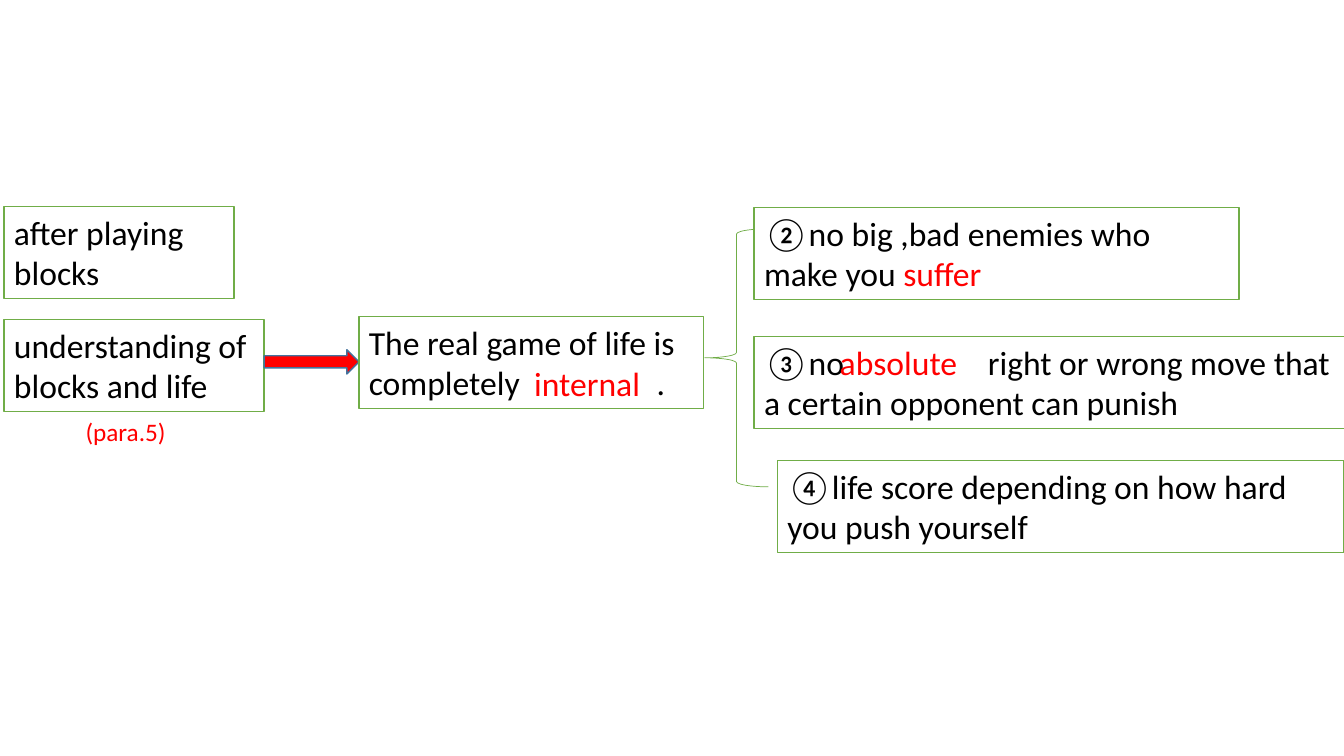
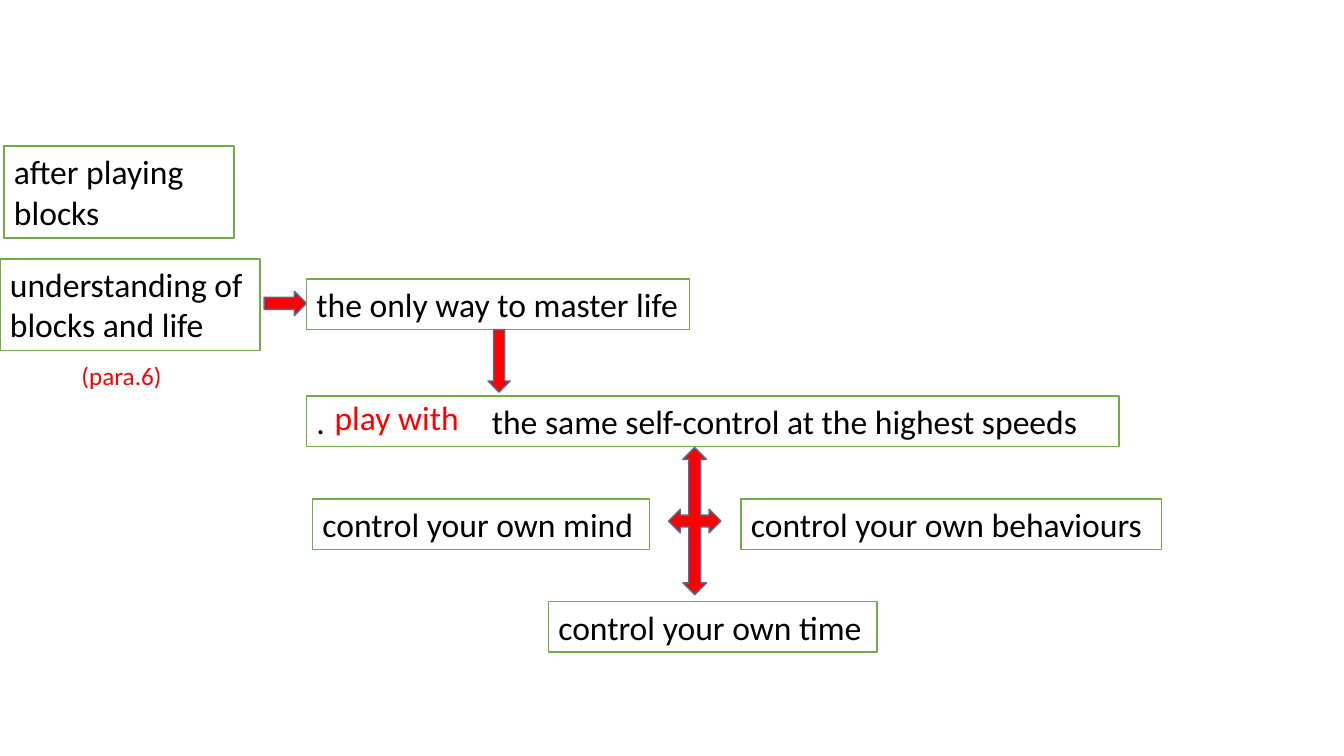
from lxml import etree
from pptx import Presentation
from pptx.dml.color import RGBColor
from pptx.enum.shapes import MSO_SHAPE as SHAPE
from pptx.enum.text import MSO_ANCHOR, MSO_AUTO_SIZE, PP_ALIGN
from pptx.oxml.ns import qn
from pptx.util import Inches, Pt

BLACK = RGBColor(0x00, 0x00, 0x00)
WHITE = RGBColor(0xFF, 0xFF, 0xFF)
RED = RGBColor(0xFF, 0x00, 0x00)
GREEN = RGBColor(0x70, 0xAD, 0x47)
BLUE = RGBColor(0x43, 0x73, 0x9E)
FONT = "Calibri"
ONE_LINE, TWO_LINES = 0.5, 0.91
ARROW = 0.24


def add_run(p, text, size=24, color=BLACK, underline=False):
    r = p.add_run()
    r.text = text
    r.font.name = FONT
    r.font.size = Pt(size)
    r.font.color.rgb = color
    if underline:
        r.font.underline = True


def add_blank(p, end):
    tabs = etree.SubElement(p._p.get_or_add_pPr(), qn("a:tabLst"))
    etree.SubElement(tabs, qn("a:tab"), pos=str(Inches(end)), algn="l")
    add_run(p, "\t", underline=True)


def start_text(sp, wrap=True):
    tf = sp.text_frame
    tf.word_wrap = wrap
    tf.auto_size = MSO_AUTO_SIZE.SHAPE_TO_FIT_TEXT
    tf.vertical_anchor = MSO_ANCHOR.TOP
    p = tf.paragraphs[0]
    p.alignment = PP_ALIGN.LEFT
    return p


def add_label(s, x, y, w, h, text, wrap=False, **fmt):
    sp = s.shapes.add_textbox(Inches(x), Inches(y), Inches(w), Inches(h))
    add_run(start_text(sp, wrap), text, color=RED, **fmt)


def add_figure(s, kind, x, y, w, h, fill=RED, line=BLUE, weight=1):
    sp = s.shapes.add_shape(kind, Inches(x), Inches(y), Inches(w), Inches(h))
    sp.shadow.inherit = False
    if fill is None:
        sp.fill.background()
    else:
        sp.fill.solid()
        sp.fill.fore_color.rgb = fill
    sp.line.color.rgb = line
    sp.line.width = Pt(weight)
    return sp


def add_box(s, x, y, w, h, text):
    sp = add_figure(s, SHAPE.RECTANGLE, x, y, w, h, WHITE, GREEN)
    p = start_text(sp)
    add_run(p, text)
    return p


def add_stage(s, x, y, para, para_gap):
    add_box(s, 0.04, y - 1.12, 2.28, TWO_LINES, "after playing blocks")
    add_label(s, x + 0.71, y + TWO_LINES + para_gap, 1.18, 0.4,
              f"(para.{para})", wrap=True, size=18)
    add_box(s, x, y, 2.58, TWO_LINES, "understanding of blocks and life")


def add_real_game(s, x, y):
    p = add_box(s, x, y, 3.42, TWO_LINES, "The real game of life is completely")
    add_blank(p, 2.78)
    add_run(p, " .")
    add_label(s, x + 1.64, y + 0.41, 1.26, ONE_LINE, "internal")


def add_reasons(s, x, y):
    add_figure(s, SHAPE.LEFT_BRACE, x, y + 0.21, 0.63, 2.56, None, GREEN, 0.5)
    left = x + 0.49
    p = add_box(s, left, y, 4.81, TWO_LINES, "②no big ,bad enemies who make you ")
    add_run(p, "suffer", color=RED)
    p = add_box(s, left, y + 1.28, 5.86, TWO_LINES, "③no ")
    add_blank(p, 2.22)
    add_run(p, "right or wrong move that a certain opponent can punish")
    add_label(s, left + 0.75, y + 1.28, 1.38, ONE_LINE, "absolute")
    add_box(s, left + 0.23, y + 2.51, 5.62, TWO_LINES,
            "④life score depending on how hard you push yourself")


def add_only_way(s, x, y):
    add_box(s, x, y, 3.8, ONE_LINE, "the only way to master life")
    add_figure(s, SHAPE.DOWN_ARROW, x + 1.8, y + ONE_LINE, 0.22, 0.62)
    p = add_box(s, x, y + 1.16, 8.06, ONE_LINE, ". ")
    add_blank(p, 1.74)
    add_run(p, "the same self-control at the highest speeds")
    add_label(s, x + 0.18, y + 1.12, 1.45, ONE_LINE, "play with")


def add_controls(s, x, y):
    add_figure(s, SHAPE.QUAD_ARROW, x + 3.53, y, 0.52, 1.46)
    for dx, dy, w, target in ((0, 0.51, 3.34, "mind"),
                              (4.25, 0.51, 4.17, "behaviours"),
                              (2.34, 1.53, 3.26, "time")):
        add_box(s, x + dx, y + dy, w, ONE_LINE, f"control your own {target}")


def build_game_slide(s):
    add_stage(s, 0.04, 3.17, 5, 0)
    add_figure(s, SHAPE.RIGHT_ARROW, 2.62, 3.47, 0.94, ARROW)
    add_real_game(s, 3.56, 3.14)
    add_reasons(s, 6.99, 2.06)


def build_control_slide(s):
    add_stage(s, 0, 2.57, 6, 0.05)
    add_figure(s, SHAPE.RIGHT_ARROW, 2.62, 2.89, 0.42, ARROW)
    add_only_way(s, 3.04, 2.77)
    add_controls(s, 3.1, 4.44)


def main():
    prs = Presentation()
    prs.slide_width, prs.slide_height = Inches(13.33), Inches(7.5)
    for build in (build_game_slide, build_control_slide):
        build(prs.slides.add_slide(prs.slide_layouts[6]))
    prs.save("out.pptx")


if __name__ == "__main__":
    main()
